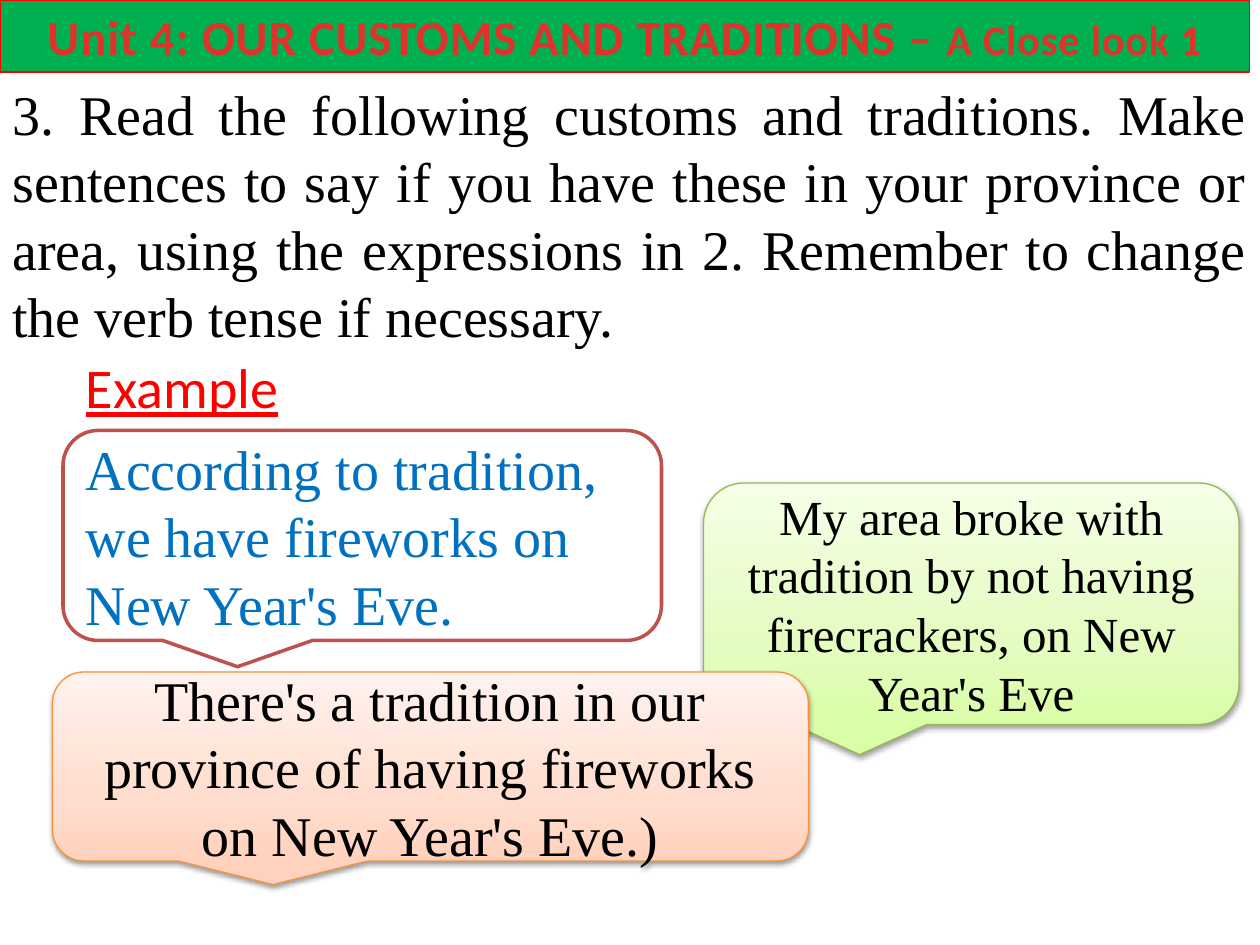
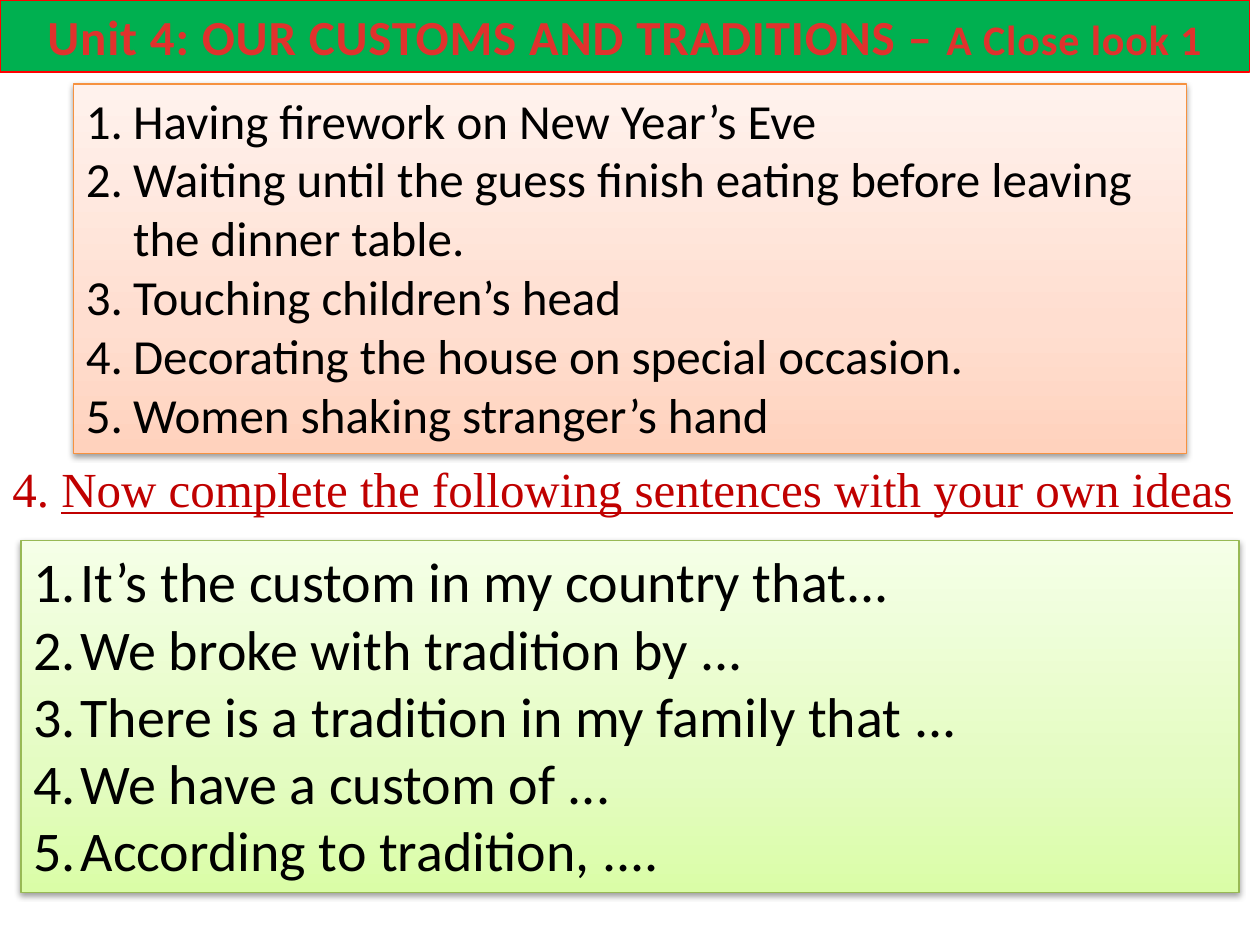
import copy

from lxml import etree
from pptx import Presentation
from pptx.dml.color import RGBColor
from pptx.enum import shapes, text
from pptx.oxml.ns import qn
from pptx.util import Pt

SERIF, SANS = "Times New Roman", "Calibri"
BLACK, RED, DARK_RED, BLUE = "000000", "FF0000", "C00000", "0070C0"
GREEN_TINT = {"stops": [(0, "DAFDA7"), (0.35, "E4FCC2"), (1, "F5FFE7")], "line": "98B955"}
ORANGE_TINT = {"stops": [(0, "FFD2BD"), (0.35, "FFDED0"), (1, "FFF2ED")], "line": "F69240"}
TITLE_STOPS = [(0.25, "E0322D"), (1, "A2201C")]
LEFT, CENTER, JUSTIFY = text.PP_ALIGN.LEFT, text.PP_ALIGN.CENTER, text.PP_ALIGN.JUSTIFY
TOP, MIDDLE = text.MSO_ANCHOR.TOP, text.MSO_ANCHOR.MIDDLE
CALLOUT = shapes.MSO_SHAPE.ROUNDED_RECTANGULAR_CALLOUT
RECTANGLE = shapes.MSO_SHAPE.RECTANGLE
LIST_INDENT = 27

CUSTOMS = [
    "Having firework on New Year’s Eve",
    "Waiting until the guess finish eating before leaving the dinner table.",
    "Touching children’s head",
    "Decorating the house on special occasion.",
    "Women shaking stranger’s hand",
]
SENTENCE_STARTS = [
    "It’s the custom in my country that...",
    "We broke with tradition by ...",
    "There is a tradition in my family that ...",
    "We have a custom of ...",
    "According to tradition, ....",
]


def color(hex_string):
    return RGBColor.from_string(hex_string)


def paint_gradient(fill, properties, stops, angle):
    """Fill with any number of (position, colour) stops; angle is counter-clockwise."""
    fill.gradient()
    fill.gradient_angle = angle
    stop_list = properties.find(".//" + qn("a:gsLst"))
    for _ in stops[2:]:
        stop_list.append(copy.deepcopy(stop_list[-1]))
    for stop, (position, shade) in zip(fill.gradient_stops, stops):
        stop.position = position
        stop.color.rgb = color(shade)


def cast_shadow(shape):
    effects = shape._element.spPr.find(qn("a:effectLst"))
    shadow = etree.SubElement(effects, qn("a:outerShdw"), blurRad="40000",
                              dist="20000", dir="5400000", rotWithShape="0")
    shade = etree.SubElement(shadow, qn("a:srgbClr"), val=BLACK)
    etree.SubElement(shade, qn("a:alpha"), val="38000")


def add_run(paragraph, words, shade=None, **font_format):
    run = paragraph.add_run()
    run.text = words
    for attribute, value in font_format.items():
        setattr(run.font, attribute, value)
    if shade:
        run.font.color.rgb = color(shade)
    return run


def set_frame(shape, anchor=TOP, grow=True):
    frame = shape.text_frame
    sizing = text.MSO_AUTO_SIZE.SHAPE_TO_FIT_TEXT if grow else text.MSO_AUTO_SIZE.NONE
    for attribute, value in {"word_wrap": True, "vertical_anchor": anchor,
                             "auto_size": sizing}.items():
        setattr(frame, attribute, value)
    return frame


def add_outlined(slide, preset, box, line, line_width=0.75, fill=None, stops=None):
    """Add a shape that is plain, or tinted with a soft shadow if stops are given."""
    shape = slide.shapes.add_shape(preset, *map(Pt, box))
    shape.shadow.inherit = False
    shape.line.color.rgb = color(line)
    shape.line.width = Pt(line_width)
    if stops:
        paint_gradient(shape.fill, shape._element.spPr, stops, 90)
        cast_shadow(shape)
    else:
        shape.fill.solid()
        shape.fill.fore_color.rgb = color(fill)
    return shape


def add_label(slide, box, align=LEFT):
    label = slide.shapes.add_textbox(*map(Pt, box))
    paragraph = set_frame(label).paragraphs[0]
    paragraph.alignment = align
    return paragraph


def add_callout(slide, box, words, size, look, shade=BLACK, align=CENTER):
    callout = add_outlined(slide, CALLOUT, box, **look)
    paragraph = set_frame(callout, MIDDLE, grow=False).paragraphs[0]
    paragraph.alignment = align
    add_run(paragraph, words, shade, size=Pt(size), name=SERIF)


def add_numbered_panel(slide, box, items, size, look):
    panel = add_outlined(slide, RECTANGLE, box, **look)
    frame = set_frame(panel)
    for index, item in enumerate(items):
        paragraph = frame.add_paragraph() if index else frame.paragraphs[0]
        paragraph.alignment = LEFT
        properties = paragraph._p.get_or_add_pPr()
        properties.set("marL", str(Pt(LIST_INDENT)))
        properties.set("indent", str(-Pt(LIST_INDENT)))
        etree.SubElement(properties, qn("a:buFont"), typeface="+mj-lt")
        etree.SubElement(properties, qn("a:buAutoNum"), type="arabicPeriod")
        add_run(paragraph, item, BLACK, size=Pt(size), name=SANS)


def add_title_band(slide):
    band = add_outlined(slide, RECTANGLE, (0, 0, 714, 41.2), RED, fill="00B050")
    paragraph = set_frame(band).paragraphs[0]
    paragraph.alignment = CENTER
    for words, size in (("Unit 4: OUR CUSTOMS AND TRADITIONS – ", 28), ("A Close look 1", 24)):
        run = add_run(paragraph, words, size=Pt(size), name=SANS, bold=True)
        properties = run._r.get_or_add_rPr()
        properties.set("spc", "50")
        paint_gradient(run.font.fill, properties, TITLE_STOPS, 270)


def build_example_slide(slide):
    task = add_label(slide, (0, 42, 720, 162.7), JUSTIFY)
    add_run(task, "3. Read the following customs and traditions. Make sentences to say if you "
            "have these in your province or area, using the expressions in 2. Remember to "
            "change the verb tense if necessary.", BLACK, size=Pt(32), name=SERIF)
    add_callout(slide, (36, 246, 342, 120),
                "According to tradition, we have fireworks on New Year's Eve.", 32,
                {"fill": "FFFFFF", "line": "C0504D", "line_width": 2}, BLUE, LEFT)
    add_callout(slide, (402, 276, 306, 138),
                "My area broke with tradition by not having firecrackers, on New Year's Eve",
                28, GREEN_TINT)
    add_callout(slide, (30, 384, 432, 108),
                "There's a tradition in our province of having fireworks on New Year's Eve.)",
                32, ORANGE_TINT)
    add_title_band(slide)
    example = add_label(slide, (42, 198, 210, 46))
    add_run(example, "Example", RED, size=Pt(32), name=SANS, underline=True)


def build_practice_slide(slide):
    add_numbered_panel(slide, (42, 48, 636, 211), CUSTOMS, 28, ORANGE_TINT)
    task = add_label(slide, (0, 258.5, 720, 41.2))
    add_run(task, "4. ", DARK_RED, size=Pt(28), name=SERIF)
    add_run(task, "Now complete the following sentences with your own ideas", DARK_RED,
            size=Pt(28), name=SERIF, underline=True)
    add_numbered_panel(slide, (12, 309, 696, 201), SENTENCE_STARTS, 32, GREEN_TINT)
    add_title_band(slide)


def main():
    deck = Presentation()
    deck.slide_width, deck.slide_height = Pt(720), Pt(540)
    for build in (build_example_slide, build_practice_slide):
        build(deck.slides.add_slide(deck.slide_layouts[6]))
    deck.save("out.pptx")


if __name__ == "__main__":
    main()
